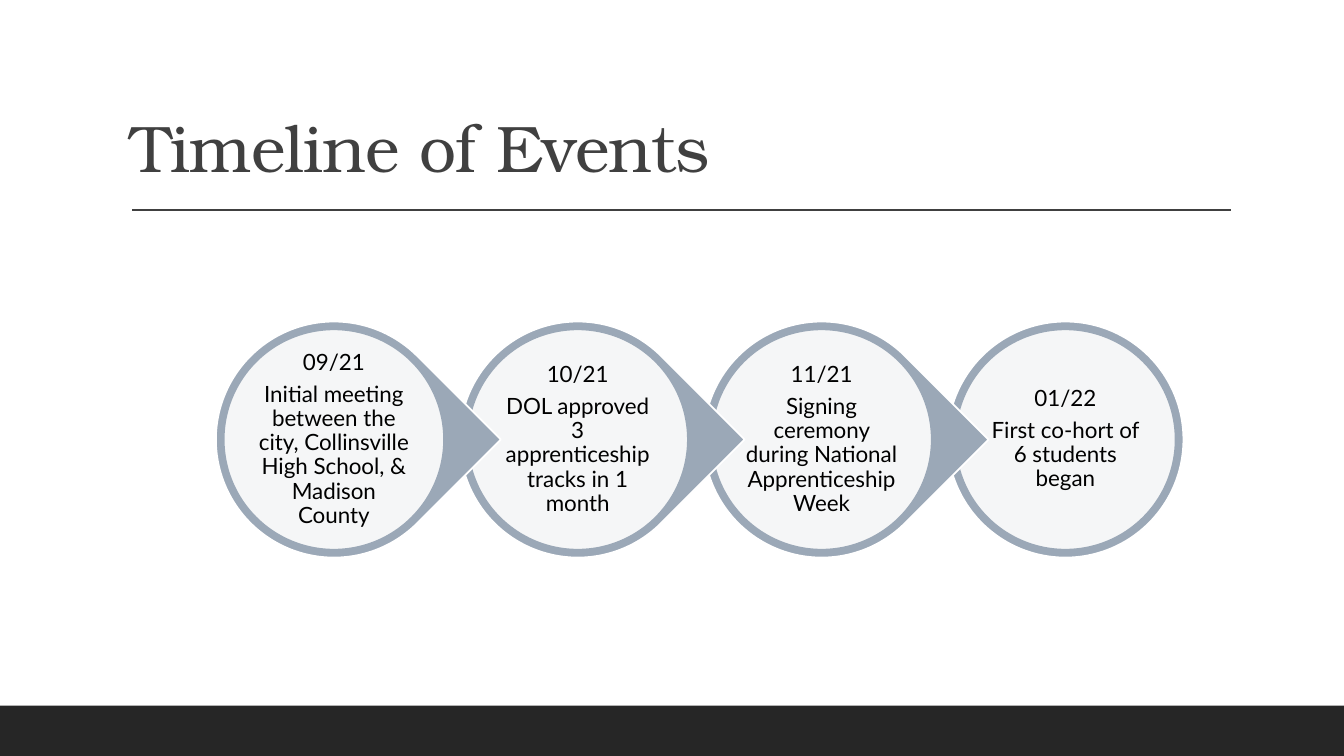
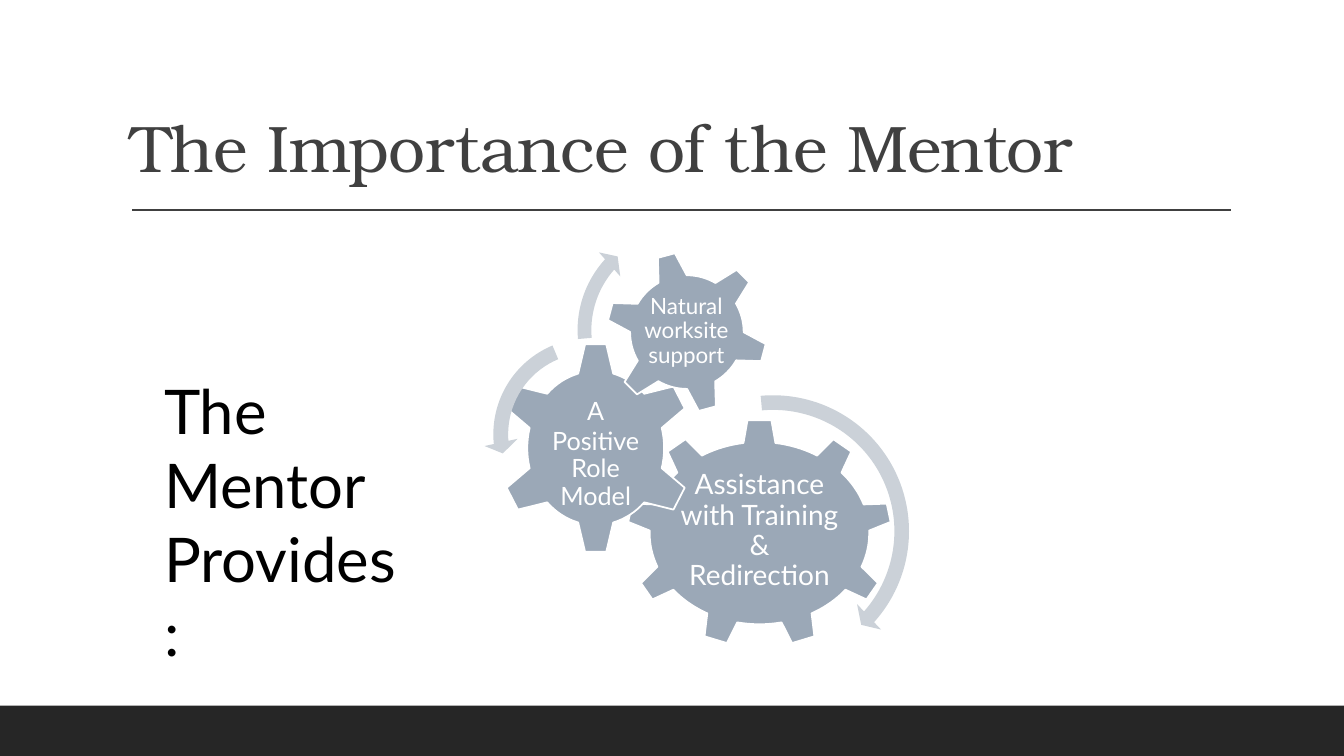
from dataclasses import dataclass
from typing import NamedTuple

from lxml.etree import SubElement
from pptx import Presentation
from pptx.dml.color import RGBColor as Rgb
from pptx.enum.shapes import MSO_CONNECTOR as Link, MSO_SHAPE as Form
from pptx.enum.text import MSO_ANCHOR as Anchor, PP_ALIGN as Align
from pptx.oxml.ns import qn
from pptx.util import Inches, Pt


@dataclass(frozen=True)
class Theme:
    dark: str = "262626"
    ink: str = "404040"
    black: str = "000000"
    white: str = "FFFFFF"
    steel: str = "9BA8B7"
    pale: str = "CBD1D8"
    serif: str = "TeX Gyre Bonum"
    sans: str = "Lato"
    title: float = 47
    lead: float = 44
    step: float = 16
    edge: float = 1.25


class Box(NamedTuple):
    """Place on a grid of 160 columns by 90 rows."""
    col: float
    row: float
    wide: float
    high: float

    def inset(self, gap: float) -> "Box":
        return Box(self.col + gap, self.row + gap, self.wide - 2 * gap, self.high - 2 * gap)


class Step(NamedTuple):
    date: str
    event: str


class Gear(NamedTuple):
    form: Form
    box: Box
    area: Box
    size: float
    pad: float
    runs: tuple
    turn: float = 0


class Arc(NamedTuple):
    form: Form
    box: Box
    bends: tuple


THEME = Theme()
WIDE, HIGH = Inches(13.333), Inches(7.5)
COLS, ROWS = 160, 90
GAP = 28  # size of the wide space in a gear label

STEPS = (
    Step("09/21", "Initial meeting between the city, Collinsville High School, & Madison County"),
    Step("10/21", "DOL approved 3 apprenticeship tracks in 1 month"),
    Step("11/21", "Signing ceremony during National Apprenticeship Week"),
    Step("01/22", "First co-hort of 6 students began"),
)
FIRST, PITCH = Box(25.7, 38.28, 28.1, 28.1), 29.03

# A run is a text and, where it differs from its paragraph, a size
GEARS = (
    Gear(Form.GEAR_9, Box(74.64, 49.92, 31.56, 27.12), Box(80.64, 56.28, 19.56, 13.92),
         20, 2, (("Assistance with Training & Redirection", None),)),
    Gear(Form.GEAR_6, Box(59.28, 40.68, 23.28, 25.32), Box(65.16, 46.92, 11.52, 12.96),
         18, 2, (("A", None), (" ", GAP), ("Positive Role Model", None))),
    Gear(Form.GEAR_6, Box(72.12, 29.88, 19.32, 19.32), Box(76.32, 34.08, 10.8, 10.8),
         16, 1.5, (("Natural worksite support", None),), 345),
)
ARCS = (
    Arc(Form.CIRCULAR_ARROW, Box(74.64, 45.84, 34.8, 34.8), (0.05, 2.99, 25.05, 158.86, 0.06)),
    Arc(Form.LEFT_CIRCULAR_ARROW, Box(57.6, 39.12, 25.2, 25.2),
        (0.07, 4.3, 104.89, 148.38, 0.08)),
    Arc(Form.CIRCULAR_ARROW, Box(67.68, 25.68, 27.24, 27.24),
        (0.06, 3.94, 133.14, 105.08, 0.07)),
)


def place(box: Box) -> tuple:
    across, down = WIDE / COLS, HIGH / ROWS
    return (round(box.col * across), round(box.row * down),
            round(box.wide * across), round(box.high * down))


def draw(slide, form: Form, box: Box, fill: str, edge: str = "", turn: float = 0):
    shape = slide.shapes.add_shape(form, *place(box))
    shape.shadow.inherit = False
    shape.rotation = turn
    shape.fill.solid()
    shape.fill.fore_color.rgb = Rgb.from_string(fill)
    if edge:
        shape.line.color.rgb = Rgb.from_string(edge)
        shape.line.width = Pt(THEME.edge)
    else:
        shape.line.fill.background()
    return shape


def fade(shape, share: int) -> None:
    tint = shape.fill._xPr.find(qn("a:solidFill"))[0]
    SubElement(tint, qn("a:alpha")).set("val", str(share * 1000))


def style(para, face: str, size: float, color: str) -> None:
    para.font.name, para.font.size = face, Pt(size)
    para.font.color.rgb = Rgb.from_string(color)


def frame(slide, box: Box, anchor: Anchor = Anchor.TOP, pad: float | None = None):
    text = slide.shapes.add_textbox(*place(box)).text_frame
    text.word_wrap, text.vertical_anchor = True, anchor
    if pad is not None:
        text.margin_left = text.margin_right = Pt(pad)
        text.margin_top = text.margin_bottom = Pt(pad)
    return text


def label(slide, box: Box, lines: tuple, size: float, color: str, pad: float) -> None:
    text = frame(slide, box, Anchor.MIDDLE, pad)
    for at, runs in enumerate(lines):
        para = text.add_paragraph() if at else text.paragraphs[0]
        para.alignment, para.line_spacing = Align.CENTER, 0.9
        para.space_after = Pt(0.35 * size)
        style(para, THEME.sans, size, color)
        for words, own in runs:
            run = para.add_run()
            run.text = words
            if own:
                run.font.size = Pt(own)


def page(deck, title: str):
    """Add a slide with the band, the rule and the title."""
    slide = deck.slides.add_slide(deck.slide_layouts[6])
    draw(slide, Form.RECTANGLE, Box(0, 84, COLS, 6), THEME.dark)

    left, top, span, _ = place(Box(15.72, 25, 130.8, 0))
    rule = slide.shapes.add_connector(Link.STRAIGHT, left, top, left + span, top)
    rule.line.color.rgb, rule.line.width = Rgb.from_string(THEME.ink), Pt(1)
    SubElement(rule._element.spPr, qn("a:effectLst"))

    para = frame(slide, Box(14.4, 3.72, 132, 19.08), Anchor.BOTTOM).paragraphs[0]
    para.line_spacing = 0.9
    style(para, THEME.serif, THEME.title, THEME.ink)
    run = para.add_run()
    run.text = title
    run._r.get_or_add_rPr().set("spc", "-50")
    return slide


def events(deck) -> None:
    slide = page(deck, "Timeline of Events")
    # Right to left, so that each point lies over the next disc
    for at, step in reversed(tuple(enumerate(STEPS))):
        box = FIRST._replace(col=FIRST.col + at * PITCH)
        last = at == len(STEPS) - 1
        form, turn = (Form.OVAL, 0) if last else (Form.TEAR, 45)
        draw(slide, form, box, THEME.steel, THEME.white, turn)
        fade(draw(slide, Form.OVAL, box.inset(0.93), THEME.white, THEME.steel), 90)
        lines = tuple(((words, None),) for words in step)
        label(slide, box.inset(4.7), lines, THEME.step, THEME.black, 1.5)


def mentor(deck) -> None:
    slide = page(deck, "The Importance of the Mentor")
    # Gears
    for gear in GEARS:
        draw(slide, gear.form, gear.box, THEME.steel, THEME.white, gear.turn)
        label(slide, gear.area, (gear.runs,), gear.size, THEME.white, gear.pad)
    # Arrows around the gears
    for arc in ARCS:
        shape = draw(slide, arc.form, arc.box, THEME.pale)
        for at, bend in enumerate(arc.bends):
            shape.adjustments[at] = bend
    # Lead text
    para = frame(slide, Box(18.36, 43.8, 30.6, 27.84)).paragraphs[0]
    style(para, THEME.sans, THEME.lead, THEME.black)
    para.add_run().text = "The Mentor Provides:"


def main() -> None:
    deck = Presentation()
    deck.slide_width, deck.slide_height = WIDE, HIGH
    events(deck)
    mentor(deck)
    deck.save("out.pptx")


if __name__ == "__main__":
    main()
